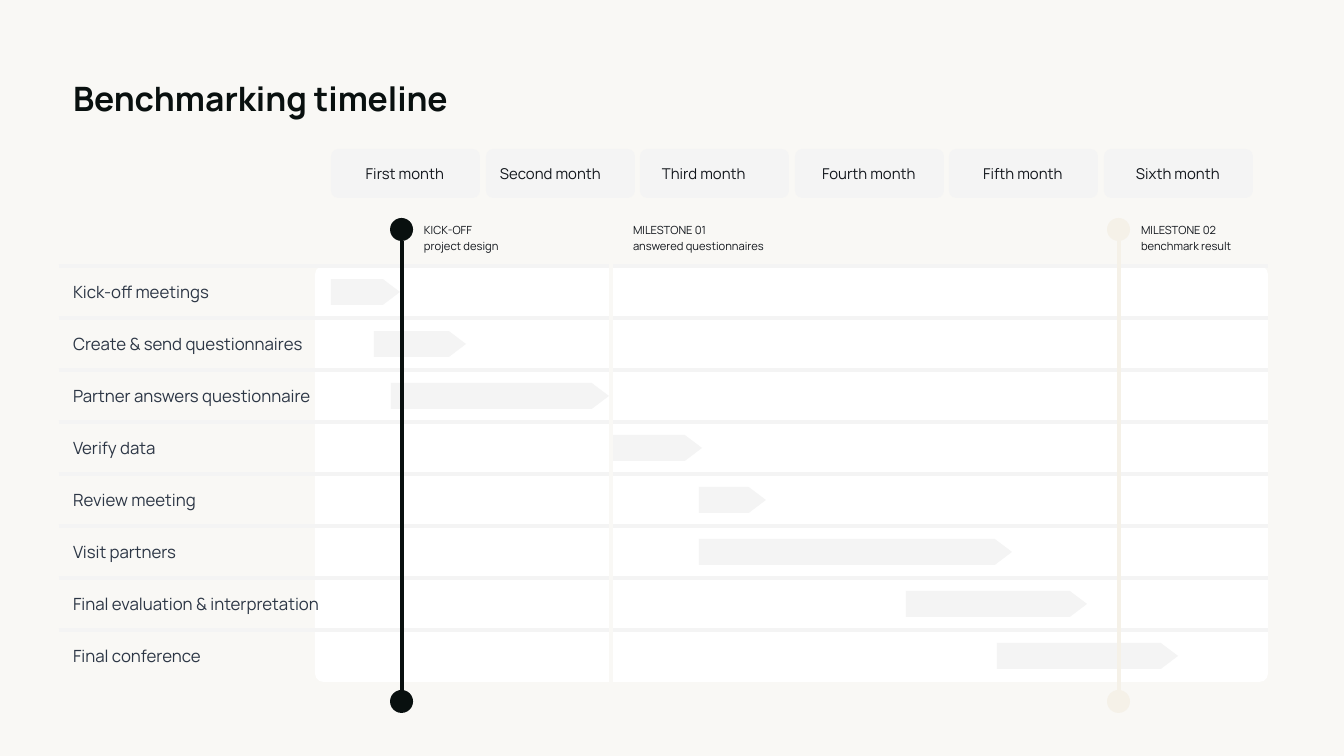
from lxml.etree import SubElement
from pptx import Presentation
from pptx.dml.color import RGBColor
from pptx.enum.shapes import MSO_CONNECTOR, MSO_SHAPE
from pptx.enum.text import MSO_ANCHOR, MSO_AUTO_SIZE, PP_ALIGN
from pptx.oxml.ns import qn
from pptx.util import Emu, Pt

PX_PER_INCH = 134.4
FONT = "Manrope"

CREAM = RGBColor(0xF9, 0xF8, 0xF5)
SAND = RGBColor(0xF5, 0xF1, 0xE8)
WHITE = RGBColor(0xFF, 0xFF, 0xFF)
GREY = RGBColor(0xF4, 0xF4, 0xF4)
BLACK = RGBColor(0x09, 0x10, 0x0F)
INK = RGBColor(0x11, 0x15, 0x1B)
SLATE = RGBColor(0x2C, 0x36, 0x45)

ROW_TOP, ROW_PITCH = 266, 52
MONTH_LEFT, MONTH_PITCH = 331, 154.6

# Month, offset of its text from the tile, alignment
MONTHS = [
    ("First month", 14, PP_ALIGN.CENTER),
    ("Second month", 14, PP_ALIGN.LEFT),
    ("Third month", 22, PP_ALIGN.LEFT),
    ("Fourth month", 14, PP_ALIGN.CENTER),
    ("Fifth month", 14, PP_ALIGN.CENTER),
    ("Sixth month", 14, PP_ALIGN.CENTER),
]

# Task, left of its bar, width of its bar
TASKS = [
    ("Kick-off meetings", 331, 69),
    ("Create & send questionnaires", 374, 92),
    ("Partner answers questionnaire", 391, 218),
    ("Verify data", 612, 90),
    ("Review meeting", 699, 67),
    ("Visit partners", 699, 313),
    ("Final evaluation & interpretation", 906, 181),
    ("Final conference", 997, 181),
]

# Centre, colour, lines of the label
MILESTONES = [
    (402, BLACK, ["KICK-OFF", "project design"]),
    (611, CREAM, ["MILESTONE 01", "answered questionnaires"]),
    (1119, SAND, ["MILESTONE 02", "benchmark result"]),
]


def px(length):
    return Emu(round(length * 914400 / PX_PER_INCH))


def add_filled_shape(slide, kind, box, color, adjustments=()):
    shape = slide.shapes.add_shape(kind, *map(px, box))
    shape.shadow.inherit = False
    shape.fill.solid()
    shape.fill.fore_color.rgb = color
    shape.line.fill.background()
    for index, value in enumerate(adjustments):
        shape.adjustments[index] = value
    return shape


def add_text(slide, box, lines, size, color, bold=False, spacing=None,
             align=PP_ALIGN.LEFT, anchor=MSO_ANCHOR.MIDDLE, inset=0):
    frame = slide.shapes.add_textbox(*map(px, box)).text_frame
    frame.word_wrap = True
    frame.auto_size = MSO_AUTO_SIZE.SHAPE_TO_FIT_TEXT
    frame.vertical_anchor = anchor
    frame.margin_left = frame.margin_right = px(inset)
    frame.margin_top = frame.margin_bottom = px(inset)
    for index, line in enumerate(lines):
        paragraph = frame.add_paragraph() if index else frame.paragraphs[0]
        paragraph.alignment = align
        paragraph.line_spacing = spacing
        run = paragraph.add_run()
        run.text = line
        run.font.name = FONT
        run.font.size = Pt(size)
        run.font.bold = bold
        run.font.color.rgb = color


def add_line(slide, start, end, color):
    line = slide.shapes.add_connector(
        MSO_CONNECTOR.STRAIGHT, *map(px, start + end))
    line.line.color.rgb = color
    line.line.width = Pt(2.25)
    SubElement(line._element.spPr, qn("a:effectLst"))


def add_month(slide, index, name, offset, align):
    left = MONTH_LEFT + round(index * MONTH_PITCH)
    add_filled_shape(slide, MSO_SHAPE.ROUNDED_RECTANGLE,
                     (left, 149, 149, 49), GREY, [0.15])
    add_text(slide, (left + offset, 165, 120, 17), [name], 8, INK, align=align)


def add_task_row(slide, index, name):
    top = ROW_TOP + index * ROW_PITCH
    add_line(slide, (59, top), (1268, top), GREY)
    add_text(slide, (73, top + 16, 281, 20), [name], 9, SLATE)


def add_task_bar(slide, index, left, width):
    top = ROW_TOP + index * ROW_PITCH + 13
    add_filled_shape(slide, MSO_SHAPE.RIGHT_ARROW,
                     (left, top, width, 26), GREY, [1, 0.66])


def add_milestone(slide, center, color, lines):
    add_text(slide, (center + 19, 219, 148, 35), lines, 6, INK,
             spacing=1.2, inset=3)
    for top in (218, 690):
        add_filled_shape(slide, MSO_SHAPE.OVAL,
                         (center - 12, top, 23, 23), color)
    add_line(slide, (center, 241), (center, 691), color)


def main():
    presentation = Presentation()
    presentation.slide_width = px(1344)
    presentation.slide_height = px(756)
    slide = presentation.slides.add_slide(presentation.slide_layouts[6])
    slide.background.fill.solid()
    slide.background.fill.fore_color.rgb = CREAM

    # Title
    add_text(slide, (73, 56, 638, 40), ["Benchmarking timeline"], 18, BLACK,
             bold=True, spacing=1.54, anchor=MSO_ANCHOR.TOP)

    # Panel with one row per task
    add_filled_shape(slide, MSO_SHAPE.ROUNDED_RECTANGLE,
                     (315, ROW_TOP, 953, 416), WHITE, [0.02])
    for index, (name, _, _) in enumerate(TASKS):
        add_task_row(slide, index, name)

    # Month headings
    for index, month in enumerate(MONTHS):
        add_month(slide, index, *month)

    # Task bars, with the milestones over them
    for index, (_, left, width) in enumerate(TASKS):
        add_task_bar(slide, index, left, width)
    for milestone in MILESTONES:
        add_milestone(slide, *milestone)

    presentation.save("out.pptx")


if __name__ == "__main__":
    main()
